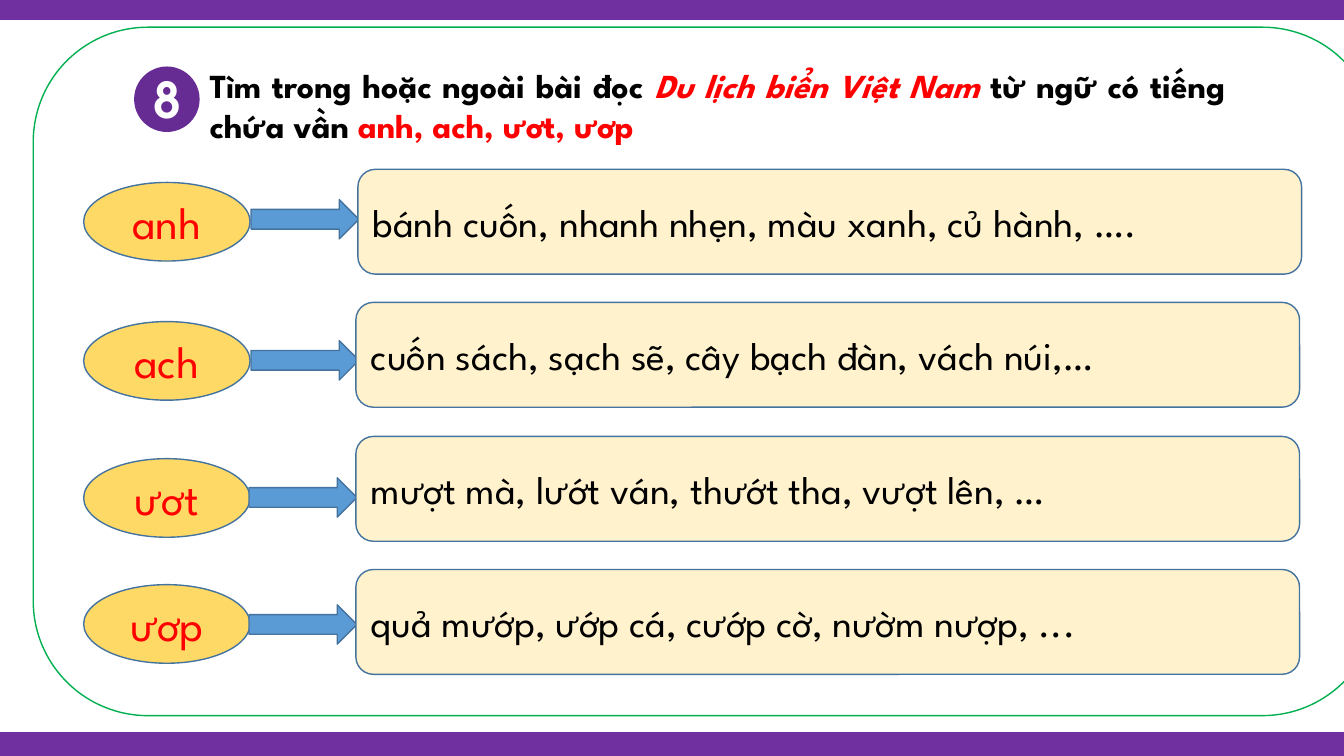
from pptx import Presentation
from pptx.dml.color import RGBColor
from pptx.enum.shapes import MSO_SHAPE
from pptx.enum.text import MSO_ANCHOR, MSO_AUTO_SIZE, PP_ALIGN
from pptx.util import Emu, Pt

PX = 9144
WHITE = RGBColor(0xFF, 0xFF, 0xFF)
BLACK = RGBColor(0x00, 0x00, 0x00)
RED = RGBColor(0xFF, 0x00, 0x00)
GREEN = RGBColor(0x00, 0xB0, 0x50)
PURPLE = RGBColor(0x70, 0x30, 0xA0)
BADGE_PURPLE = RGBColor(0x67, 0x2C, 0x94)
GOLD = RGBColor(0xFF, 0xD9, 0x66)
CREAM = RGBColor(0xFF, 0xF2, 0xCC)
BLUE = RGBColor(0x5B, 0x9B, 0xD5)
DARK_BLUE = RGBColor(0x43, 0x73, 0x9E)
FONT = "League Spartan"
BADGE_FONT = "TeX Gyre Adventor"


def add_box(shapes, kind, left, top, width, height, fill, line=None):
    box = shapes.add_shape(kind, *(Emu(n * PX) for n in (left, top, width, height)))
    box.shadow.inherit = False
    box.fill.solid()
    box.fill.fore_color.rgb = fill
    if line is None:
        box.line.fill.background()
    else:
        box.line.color.rgb = line
        box.line.width = Pt(1)
    box.text_frame.vertical_anchor = MSO_ANCHOR.MIDDLE
    return box


def add_text(box, align, runs, size, font=FONT, bold=False):
    box.text_frame.word_wrap = True
    para = box.text_frame.paragraphs[0]
    para.alignment = align
    for text, color, italic in runs:
        span = para.add_run()
        span.text = text
        span.font.name = font
        span.font.size = Pt(size)
        span.font.bold = bold
        span.font.italic = italic
        span.font.color.rgb = color


deck = Presentation()
deck.slide_width = Emu(1333 * PX)
deck.slide_height = Emu(750 * PX)
page = deck.slides.add_slide(deck.slide_layouts[6])

add_box(page.shapes, MSO_SHAPE.ROUNDED_RECTANGLE, 33, 27, 1333, 683, WHITE, GREEN)
for band_top in (-6, 727):
    add_box(page.shapes, MSO_SHAPE.RECTANGLE, 0, band_top, 1333, 25, PURPLE, PURPLE)

heading = page.shapes.add_group_shape()
badge = add_box(heading.shapes, MSO_SHAPE.OVAL, 133, 66, 65, 65, BADGE_PURPLE)
add_text(badge, PP_ALIGN.CENTER, [("8", WHITE, False)], 35.2, BADGE_FONT, True)
title = heading.shapes.add_textbox(*(Emu(n * PX) for n in (198, 59, 1027, 91)))
title.text_frame.auto_size = MSO_AUTO_SIZE.SHAPE_TO_FIT_TEXT
title_runs = [
    ("Tìm trong hoặc ngoài bài đọc ", BLACK, False),
    ("Du lịch biển Việt Nam ", RED, True),
    ("từ ngữ có tiếng chứa vần ", BLACK, False),
    ("anh, ach, ươt, ươp", RED, False),
]
add_text(title, PP_ALIGN.JUSTIFY, title_runs, 24, bold=True)

rows = [
    ("anh", 181, 249, 198, 355, "bánh cuốn, nhanh nhẹn, màu xanh, củ hành, ...."),
    ("ach", 319, 249, 338, 353, "cuốn sách, sạch sẽ, cây bạch đàn, vách núi,…"),
    ("ươt", 455, 247, 474, 353, "mượt mà, lướt ván, thướt tha, vượt lên, …"),
    ("ươp", 580, 247, 600, 353, "quả mướp, ướp cá, cướp cờ, nườm nượp, ..."),
]
rows[0] = rows[0][:-1] + ("bánh cuốn, nhanh nhẹn, màu xanh, củ hành, ….",)
for index, (rhyme, oval_top, arrow_left, arrow_top, words_left, words) in enumerate(rows):
    oval = add_box(page.shapes, MSO_SHAPE.OVAL, 83, oval_top, 165, 78, GOLD, DARK_BLUE)
    add_text(oval, PP_ALIGN.CENTER, [(rhyme, RED, False)], 32)
    add_box(page.shapes, MSO_SHAPE.RIGHT_ARROW, arrow_left, arrow_top, 107, 39, BLUE, DARK_BLUE)
    words_top = 168 + round(index * 132.4)
    words_box = add_box(page.shapes, MSO_SHAPE.ROUNDED_RECTANGLE,
                        words_left, words_top, 936, 104, CREAM, DARK_BLUE)
    add_text(words_box, PP_ALIGN.LEFT, [(words, BLACK, False)], 28)

deck.save("out.pptx")
